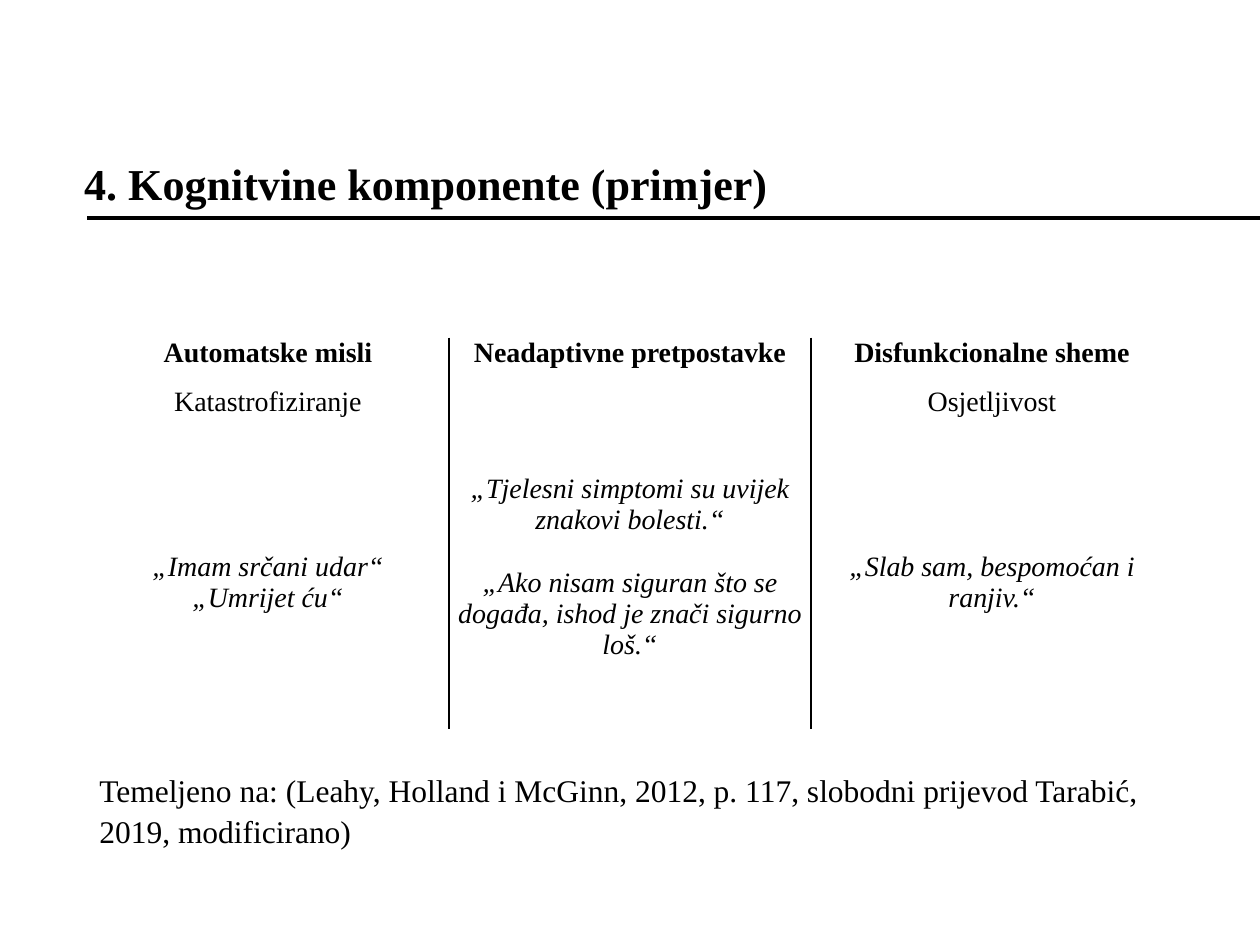
from lxml import etree
from pptx import Presentation
from pptx.dml.color import RGBColor
from pptx.enum.shapes import MSO_CONNECTOR
from pptx.enum.text import MSO_ANCHOR, PP_ALIGN
from pptx.oxml.ns import qn
from pptx.util import Inches, Pt

BLACK = RGBColor(0, 0, 0)
FONT = "Times New Roman"
STRAIGHT = MSO_CONNECTOR.STRAIGHT
TOP, MIDDLE = MSO_ANCHOR.TOP, MSO_ANCHOR.MIDDLE
CENTER = PP_ALIGN.CENTER
PLAIN_TABLE = "{2D5ABB26-0587-4C30-8999-92F81FD0307C}"  # no style, no grid

WIDTH, HEIGHT = 10, 7.5
MARGIN = 0.69
CONTENT = WIDTH - 2 * MARGIN
ROW_HEIGHTS = [0.39, 0.39, 2.33]
BLANK_LINE = 18  # points

# Heading, category and quotes of each column
COLUMNS = [
    ("Automatske misli", "Katastrofiziranje",
     ["„Imam srčani udar“", "„Umrijet ću“"]),
    ("Neadaptivne pretpostavke", "",
     ["„Tjelesni simptomi su uvijek znakovi bolesti.“",
      "„Ako nisam siguran što se događa, ishod je znači sigurno loš.“"]),
    ("Disfunkcionalne sheme", "Osjetljivost",
     ["„Slab sam, bespomoćan i ranjiv.“"]),
]
SPACED_COLUMN = 1


def add_span(para, text, size, bold=False, italic=False):
    span = para.add_run()
    span.text = text
    font = span.font
    font.name, font.size = FONT, Pt(size)
    font.bold, font.italic = bold, italic
    font.color.rgb = BLACK


def add_text(page, box, text, size, line_spacing, anchor=TOP, bold=False):
    frame = page.shapes.add_textbox(*map(Inches, box)).text_frame
    frame.word_wrap = True
    frame.vertical_anchor = anchor
    para = frame.paragraphs[0]
    para.line_spacing = line_spacing
    add_span(para, text, size, bold)


def add_title(page, box):
    left, top, width, height = box
    add_text(page, (left - 0.12, top, width + 0.12, height),
             "4. Kognitvine komponente (primjer)", 25.2, 0.9, MIDDLE, True)
    # Rule from the margin to the slide's right edge
    y = Inches(top + height)
    rule = page.shapes.add_connector(STRAIGHT, Inches(WIDTH), y, Inches(left), y)
    rule.line.color.rgb = BLACK
    rule.line.width = Pt(2)
    etree.SubElement(rule._element.spPr, qn("a:effectLst"))


def set_side_borders(cell, sides):
    properties = cell._tc.get_or_add_tcPr()
    for position, side in enumerate(sides):
        line = etree.Element(qn(f"a:ln{side}"), w=str(Pt(1)))
        fill = etree.SubElement(line, qn("a:solidFill"))
        etree.SubElement(fill, qn("a:srgbClr"), val=str(BLACK))
        properties.insert(position, line)


def fill_cell(cell, texts, bold=False, italic=False, gap=0):
    cell.margin_left = cell.margin_right = Inches(0.07)
    cell.margin_top = cell.margin_bottom = 0
    cell.fill.background()
    frame = cell.text_frame
    for number, text in enumerate(texts):
        para = frame.add_paragraph() if number else frame.paragraphs[0]
        para.alignment = CENTER
        if number and gap:
            para.space_before = Pt(gap)
        if text:
            add_span(para, text, 16, bold, italic)


def add_components(page, box):
    frame = page.shapes.add_table(len(ROW_HEIGHTS), len(COLUMNS), *map(Inches, box))
    table = frame.table
    table.first_row = table.horz_banding = False
    table._tbl.tblPr.find(qn("a:tableStyleId")).text = PLAIN_TABLE
    for row, height in zip(table.rows, ROW_HEIGHTS):
        row.height = Inches(height)

    last = len(COLUMNS) - 1
    for column, (heading, category, quotes) in enumerate(COLUMNS):
        cells = [table.cell(row, column) for row in range(len(ROW_HEIGHTS))]
        gap = BLANK_LINE if column == SPACED_COLUMN else 0
        fill_cell(cells[0], [heading], bold=True)
        fill_cell(cells[1], [category])
        fill_cell(cells[2], quotes, italic=True, gap=gap)
        cells[2].vertical_anchor = MIDDLE
        cells[2].margin_bottom = Pt(gap)
        # Dividers between neighbouring columns only
        sides = ("L" if column else "") + ("R" if column < last else "")
        for cell in cells:
            set_side_borders(cell, sides)


def add_citation(page, box):
    add_text(page, box,
             "Temeljeno na: (Leahy, Holland i McGinn, 2012, p. 117, "
             "slobodni prijevod Tarabić, 2019, modificirano)", 18, 1.07)


def main():
    deck = Presentation()
    deck.slide_width, deck.slide_height = Inches(WIDTH), Inches(HEIGHT)
    page = deck.slides.add_slide(deck.slide_layouts[6])
    add_title(page, (MARGIN, 1.22, CONTENT, 0.51))
    add_components(page, (MARGIN, 2.68, CONTENT, sum(ROW_HEIGHTS)))
    add_citation(page, (MARGIN, 6.05, CONTENT, 0.73))
    deck.save("out.pptx")


if __name__ == "__main__":
    main()
